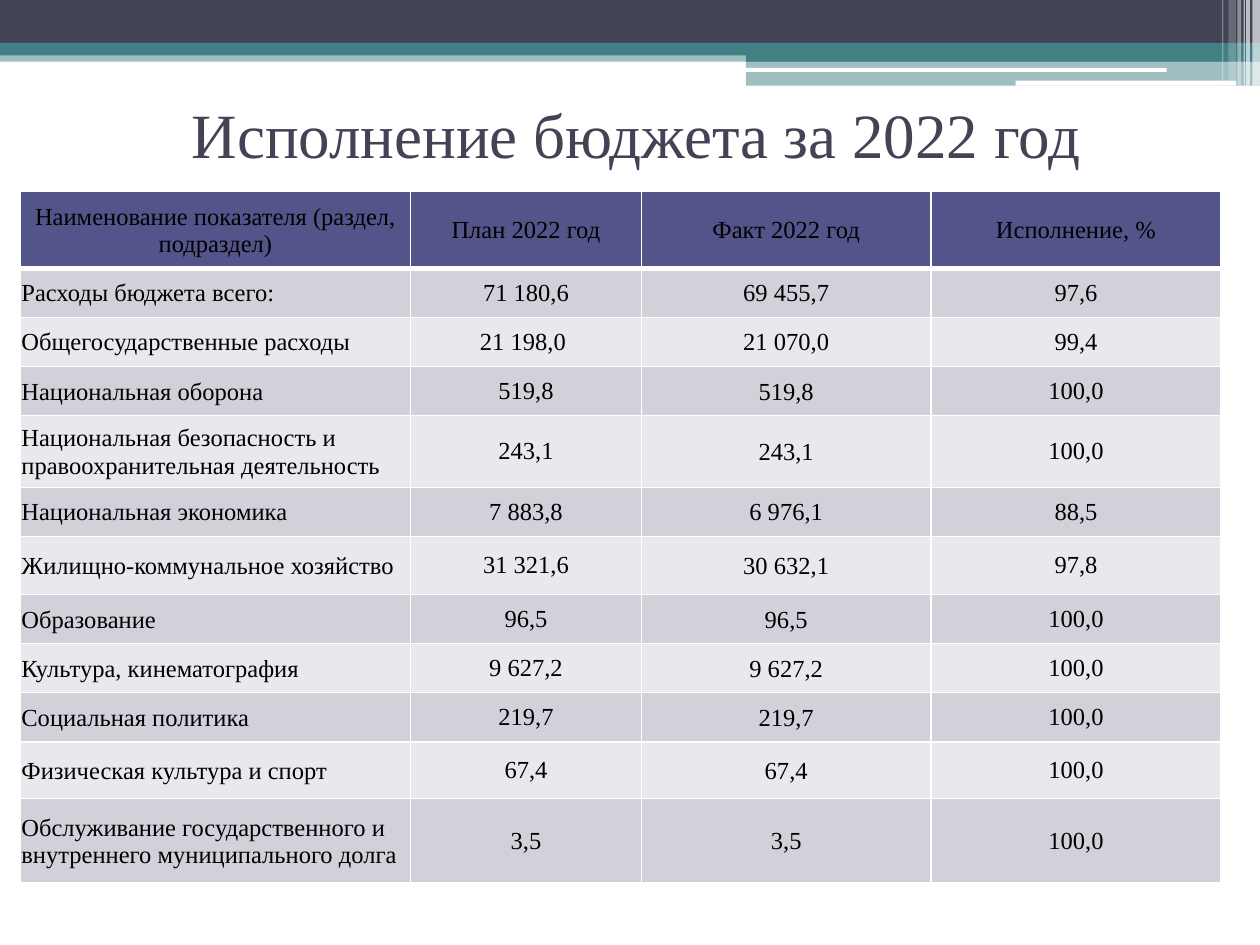
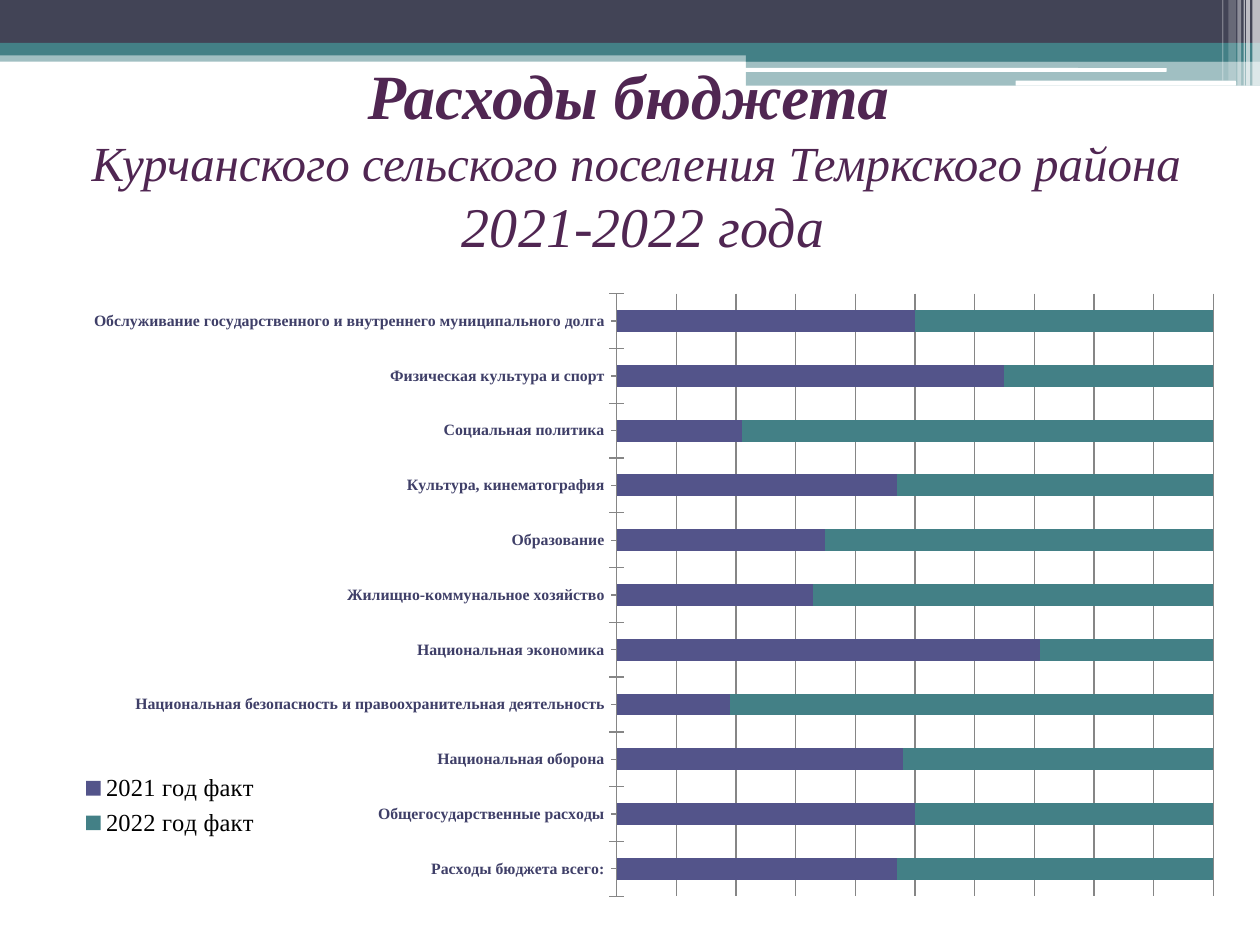
from dataclasses import dataclass

from lxml.etree import SubElement
from pptx import Presentation
from pptx.chart.data import CategoryChartData
from pptx.dml.color import RGBColor
from pptx.enum.chart import XL_CHART_TYPE, XL_LEGEND_POSITION, XL_TICK_MARK
from pptx.enum.shapes import MSO_SHAPE
from pptx.enum.text import MSO_ANCHOR, PP_ALIGN
from pptx.oxml.ns import qn
from pptx.util import Inches, Pt

# Content
TITLE = "Исполнение бюджета за 2022 год"
HEADS = ["Наименование показателя (раздел, подраздел)", "План 2022 год",
         "Факт 2022 год", "Исполнение, %"]
# name, plan, fact, percent, row height
ROWS = [
    ("Расходы бюджета всего:", "71 180,6", "69 455,7", "97,6", 0.39),
    ("Общегосударственные расходы", "21 198,0 ", "21 070,0", "99,4", 0.39),
    ("Национальная оборона", "519,8", "519,8", "100,0", 0.39),
    ("Национальная безопасность и правоохранительная деятельность",
     "243,1", "243,1", "100,0", 0.57),
    ("Национальная экономика", "7 883,8", "6 976,1", "88,5", 0.39),
    ("Жилищно-коммунальное хозяйство", "31 321,6", "30 632,1", "97,8", 0.46),
    ("Образование", "96,5", "96,5", "100,0", 0.39),
    ("Культура, кинематография", "9 627,2", "9 627,2", "100,0", 0.39),
    ("Социальная политика", "219,7", "219,7", "100,0", 0.39),
    ("Физическая культура и спорт", "67,4", "67,4", "100,0", 0.45),
    ("Обслуживание государственного и внутреннего муниципального долга",
     "3,5", "3,5", "100,0", 0.67),
]
COLS = [3.1, 1.83, 2.3, 2.3]
HEAD_H = 0.61
SHARES = {
    "2021 год факт": [47, 50, 48, 19, 71, 33, 35, 47, 21, 65, 50],
    "2022 год факт": [53, 50, 52, 81, 29, 67, 65, 53, 79, 35, 50],
}


# Theme
@dataclass(frozen=True)
class Theme:
    font: str = "Times New Roman"
    body: str = "Cambria"
    dark: str = "424456"
    teal: str = "438086"
    blue: str = "53548A"
    plum: str = "502652"
    label: str = "3F3F68"
    grid: str = "868686"
    white: str = "FFFFFF"
    black: str = "000000"
    odd: str = "D1D1DA"
    even: str = "E9E9ED"
    big: int = 36
    mid: int = 32
    sub: int = 28
    base: int = 18
    cell: int = 14
    tick: int = 9


T = Theme()
WIDE, HIGH = 10, 7.5
SPLIT = 5.92

# left, top, width, height, colour, opacity
BANDS = [
    (0, 0.4, WIDE, 0.09, T.teal, 50),
    (0, 0, WIDE, 0.34, T.dark, 100),
    (0, 0.34, WIDE, 0.1, T.teal, 100),
    (SPLIT, 0.39, WIDE - SPLIT, 0.1, T.teal, 100),
    (SPLIT, 0.48, WIDE - SPLIT, 0.2, T.teal, 50),
]
PILLS = [(5.91, 0.54, 3.35, 0.03), (8.06, 0.64, 1.75, 0.04)]
# left, width, height, opacity
STRIPES = [(9.94, 0.06, 0.68, 65), (9.89, 0.03, 0.68, 65),
           (9.87, 0.01, 0.68, 60), (9.82, 0.03, 0.68, 40),
           (9.75, 0.06, 0.64, 20), (9.7, 0.01, 0.64, 30)]


def rgb(code):
    return RGBColor.from_string(code)


def style(font, size, color, bold=False, italic=False):
    font.name, font.size = T.font, Pt(size)
    font.color.rgb = rgb(color)
    font.bold, font.italic = bold, italic


# Shared slide parts
def bar(slide, box, color, alpha=100, kind=MSO_SHAPE.RECTANGLE):
    shape = slide.shapes.add_shape(kind, *map(Inches, box))
    shape.shadow.inherit = False
    shape.fill.solid()
    shape.fill.fore_color.rgb = rgb(color)
    shape.line.fill.background()
    if alpha < 100:
        tint = shape.element.spPr.find(".//" + qn("a:srgbClr"))
        SubElement(tint, qn("a:alpha"), val=str(alpha * 1000))


def base(deck):
    slide = deck.slides.add_slide(deck.slide_layouts[6])
    for *box, color, alpha in BANDS:
        bar(slide, box, color, alpha)
    for box in PILLS:
        bar(slide, box, T.white, kind=MSO_SHAPE.ROUNDED_RECTANGLE)
    for left, width, height, alpha in STRIPES:
        bar(slide, (left, 0, width, height), T.white, alpha)
    return slide


def title(slide, top, anchor, lines, inset=0.05):
    """Each line is text, size, colour, bold, italic."""
    box = slide.shapes.add_textbox(*map(Inches, (0.55, top, 9, 1.25)))
    frame = box.text_frame
    frame.word_wrap = True
    frame.vertical_anchor = anchor
    frame.margin_top = Inches(inset)
    frame.text = "\n".join(line[0] for line in lines)
    for para, (_, *look) in zip(frame.paragraphs, lines):
        para.alignment = PP_ALIGN.CENTER
        style(para.runs[0].font, *look)


# Table
def edge(cell, sizes):
    props = cell._tc.get_or_add_tcPr()
    for side, size in zip("LRTB", sizes):
        line = SubElement(props, qn("a:ln" + side), w=str(Pt(size)))
        fill = SubElement(line, qn("a:solidFill"))
        SubElement(fill, qn("a:srgbClr"), val=T.white)


def put(cell, text, row, col):
    cell.text = text
    cell.vertical_anchor = MSO_ANCHOR.MIDDLE
    if col == 0 or (col == 2 and row):
        cell.margin_left = cell.margin_right = cell.margin_top = Inches(0.01)
        cell.margin_bottom = 0
    para = cell.text_frame.paragraphs[0]
    left = row and col == 0
    para.alignment = PP_ALIGN.LEFT if left else PP_ALIGN.CENTER
    style(para.runs[0].font, T.cell, T.black)
    edge(cell, (1, 1, 3 if row == 1 else 1, 1 if row else 3))
    cell.fill.solid()
    tone = T.odd if row % 2 else T.even
    cell.fill.fore_color.rgb = rgb(tone if row else T.blue)


def grid(slide):
    highs = [HEAD_H] + [row[-1] for row in ROWS]
    box = (0.16, 1.52, sum(COLS), sum(highs))
    table = slide.shapes.add_table(len(highs), len(COLS),
                                   *map(Inches, box)).table
    for col, width in zip(table.columns, COLS):
        col.width = Inches(width)
    for line, high in zip(table.rows, highs):
        line.height = Inches(high)
    for r, texts in enumerate([HEADS] + [row[:-1] for row in ROWS]):
        for c, text in enumerate(texts):
            put(table.cell(r, c), text, r, c)


# Chart
def place(part, index, box, inner=False):
    """Give a chart part a fixed place, as shares of the chart."""
    for old in part.findall(qn("c:layout")):
        part.remove(old)
    layout = SubElement(part, qn("c:layout"))
    part.insert(index, layout)
    spot = SubElement(layout, qn("c:manualLayout"))
    if inner:
        SubElement(spot, qn("c:layoutTarget"), val="inner")
    for name in "xy":
        SubElement(spot, qn(f"c:{name}Mode"), val="edge")
    for name, share in zip("xywh", box):
        SubElement(spot, qn("c:" + name), val=str(share))


def bars(slide):
    data = CategoryChartData(number_format="0.0")
    data.categories = [row[0] for row in ROWS]
    for name, vals in SHARES.items():
        data.add_series(name, vals)
    chart = slide.shapes.add_chart(
        XL_CHART_TYPE.BAR_STACKED_100,
        *map(Inches, (0, 2.11, 11.25, 5.04)), data).chart
    chart.has_title = False
    chart.font.name, chart.font.size = T.body, Pt(T.base)
    chart.font.color.rgb = rgb(T.black)

    plot = chart.plots[0]
    plot.gap_width, plot.overlap = 150, 100
    plot.vary_by_categories = False
    for series, color in zip(plot.series, (T.blue, T.teal)):
        series.format.fill.solid()
        series.format.fill.fore_color.rgb = rgb(color)

    names, scale = chart.category_axis, chart.value_axis
    names.major_tick_mark = XL_TICK_MARK.CROSS
    names.minor_tick_mark = XL_TICK_MARK.OUTSIDE
    style(names.tick_labels.font, T.tick, T.label, bold=True)
    scale.visible = False
    scale.has_major_gridlines = True
    for line in (names.format.line, scale.major_gridlines.format.line):
        line.color.rgb = rgb(T.grid)
        line.width = Pt(0.75)

    chart.has_legend = True
    key = chart.legend
    key.position = XL_LEGEND_POSITION.RIGHT
    key.include_in_layout = True
    style(key.font, T.cell, T.black)
    place(key._element, 1, (0.03, 0.79, 0.18, 0.12))
    area = chart._chartSpace.find(".//" + qn("c:plotArea"))
    place(area, 0, (0.435, 0.044, 0.421, 0.949), inner=True)


def main():
    deck = Presentation()
    deck.slide_width, deck.slide_height = Inches(WIDE), Inches(HIGH)

    # Budget table
    slide = base(deck)
    title(slide, 0.16, MSO_ANCHOR.BOTTOM, [(TITLE, T.big, T.dark)])
    grid(slide)

    # Spending by year
    slide = base(deck)
    bars(slide)
    title(slide, 0.31, MSO_ANCHOR.TOP, [
        ("Расходы бюджета ", T.big, T.plum, True, True),
        ("Курчанского сельского поселения Темркского района",
         T.sub, T.plum, False, True),
        (" 2021-2022 года", T.mid, T.plum, False, True),
    ], inset=0.14)

    deck.save("out.pptx")


if __name__ == "__main__":
    main()
